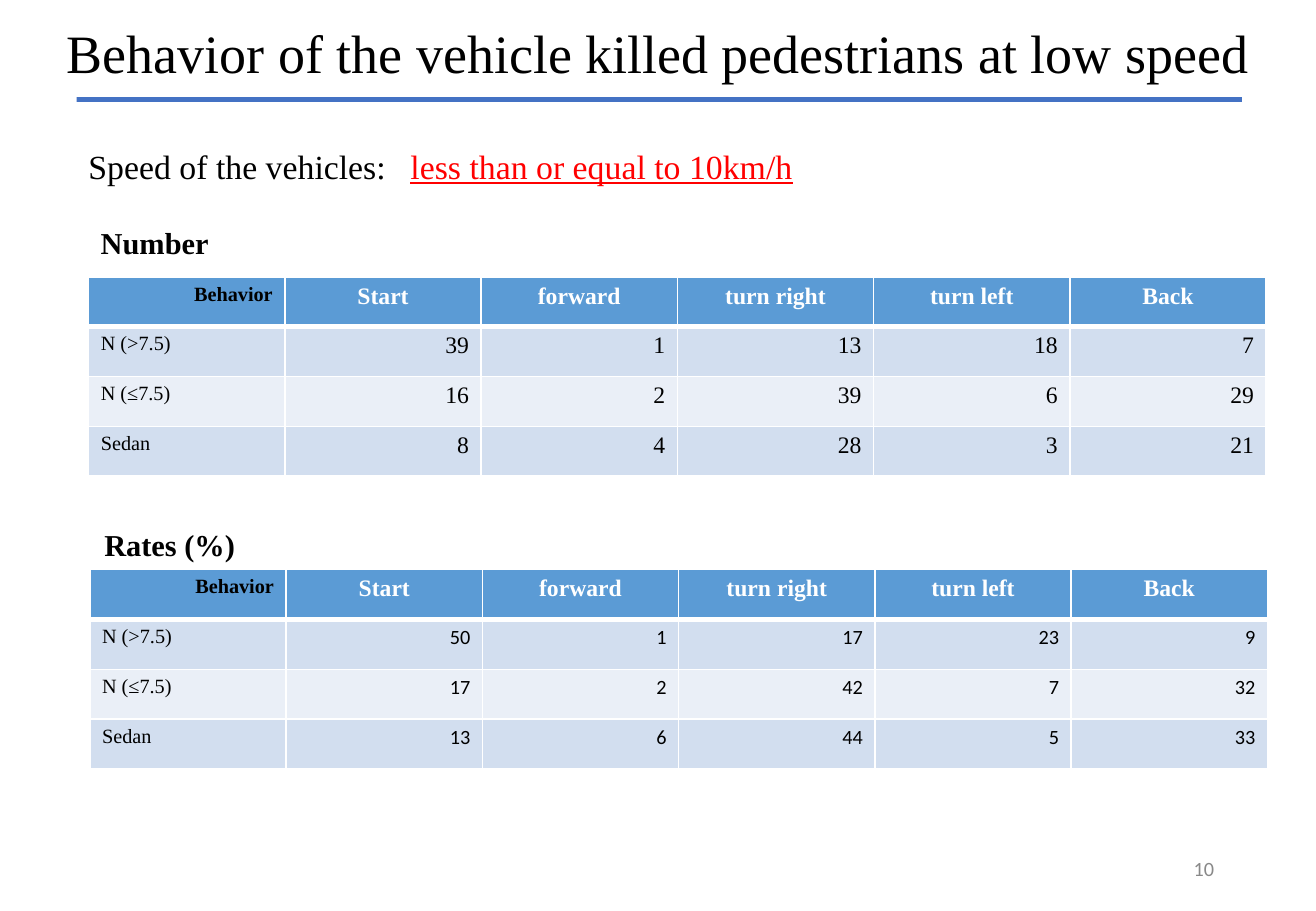
"""Build a slide with two tables on vehicle behavior in low-speed pedestrian deaths."""
from lxml import etree
from pptx import Presentation
from pptx.dml.color import RGBColor
from pptx.enum.shapes import MSO_SHAPE
from pptx.enum.text import MSO_ANCHOR, PP_ALIGN
from pptx.oxml.ns import qn
from pptx.util import Inches, Pt

LEFT, CENTER, RIGHT = PP_ALIGN.LEFT, PP_ALIGN.CENTER, PP_ALIGN.RIGHT
TOP, MIDDLE = MSO_ANCHOR.TOP, MSO_ANCHOR.MIDDLE
RECTANGLE = MSO_SHAPE.RECTANGLE
TITLE_ONLY = 5
SERIF, SANS = "Times New Roman", "Calibri"
BLACK, WHITE, RED, GRAY = "000000", "FFFFFF", "FF0000", "898989"
RULE_BLUE, HEADER_BLUE = "4472C4", "5B9BD5"
BANDS = ("D2DEEF", "EAEFF7")

TITLE = "Behavior of the vehicle killed pedestrians at low speed"
SPEED_LABEL, SPEED_LIMIT = "Speed of the vehicles:", "less than or equal to 10km/h"
PAGE_NUMBER = "10"
HEADER = ("Behavior", "Start", "forward", "turn right", "turn left", "Back")
NUMBERS = (
    ("N (>7.5)", 39, 1, 13, 18, 7),
    ("N (≤7.5)", 16, 2, 39, 6, 29),
    ("Sedan", 8, 4, 28, 3, 21),
)
RATES = (
    ("N (>7.5)", 50, 1, 17, 23, 9),
    ("N (≤7.5)", 17, 2, 42, 7, 32),
    ("Sedan", 13, 6, 44, 5, 33),
)
SECTIONS = (
    ("Number", (0.73, 1.8), NUMBERS, (0.73, 2.28), SERIF, 14),
    ("Rates (%)", (0.76, 4.28), RATES, (0.74, 4.69), SANS, 12),
)
TABLE_WIDTH, ROW_HEIGHT = 9.69, 0.41


def color(value):
    return RGBColor.from_string(value)


def format_run(run, size, font=SERIF, fill=BLACK, bold=False, underline=False):
    run.font.size = Pt(size)
    run.font.name = font
    run.font.color.rgb = color(fill)
    run.font.bold = bold
    run.font.underline = underline


def write(text_frame, text, size, align=LEFT, anchor=TOP, **style):
    text_frame.text = text
    text_frame.word_wrap = True
    text_frame.vertical_anchor = anchor
    paragraph = text_frame.paragraphs[0]
    paragraph.alignment = align
    format_run(paragraph.runs[0], size, **style)
    return paragraph


def add_text(slide, box, text, size, **style):
    shape = slide.shapes.add_textbox(*map(Inches, box))
    return write(shape.text_frame, text, size, **style)


def add_title(slide):
    title = slide.shapes.title
    title.left, title.top, title.width, title.height = map(Inches, (0.42, 0.11, 10, 0.64))
    write(title.text_frame, TITLE, 32, align=CENTER, anchor=MIDDLE)
    rule = slide.shapes.add_shape(RECTANGLE, *map(Inches, (0.63, 0.8, 9.59, 0.04)))
    rule.shadow.inherit = False
    rule.fill.solid()
    rule.fill.fore_color.rgb = color(RULE_BLUE)
    rule.line.fill.background()


def add_speed(slide):
    paragraph = add_text(slide, (0.63, 1.15, 6.2, 0.44), SPEED_LABEL + "\t", 20)
    tabs = etree.SubElement(paragraph._p.get_or_add_pPr(), qn("a:tabLst"))
    etree.SubElement(tabs, qn("a:tab"), pos=str(Inches(2.65)), algn="l")
    limit = paragraph.add_run()
    limit.text = SPEED_LIMIT
    format_run(limit, 20, fill=RED, underline=True)


def add_borders(cell, row):
    top, bottom = 3 if row == 1 else 1, 3 if row == 0 else 1
    properties = cell._tc.get_or_add_tcPr()
    for side, width in (("L", 1), ("R", 1), ("T", top), ("B", bottom)):
        line = etree.SubElement(properties, qn("a:ln" + side), w=str(Pt(width)))
        solid = etree.SubElement(line, qn("a:solidFill"))
        etree.SubElement(solid, qn("a:srgbClr"), val=WHITE)


def cell_style(row, column, value_font, value_size):
    if row == 0 and column == 0:
        return dict(size=12, align=RIGHT, bold=True)
    if row == 0:
        return dict(size=14, align=CENTER, fill=WHITE, bold=True)
    if column == 0:
        return dict(size=12)
    return dict(size=value_size, align=RIGHT, font=value_font)


def add_behavior_table(slide, position, data, value_font, value_size):
    rows = (HEADER,) + data
    box = (*position, TABLE_WIDTH, ROW_HEIGHT * len(rows))
    table = slide.shapes.add_table(len(rows), len(HEADER), *map(Inches, box)).table
    for row, values in enumerate(rows):
        background = BANDS[(row - 1) % 2] if row else HEADER_BLUE
        for column, value in enumerate(values):
            cell = table.cell(row, column)
            add_borders(cell, row)
            cell.fill.solid()
            cell.fill.fore_color.rgb = color(background)
            write(cell.text_frame, str(value), **cell_style(row, column, value_font, value_size))


def main():
    presentation = Presentation()
    presentation.slide_width, presentation.slide_height = Inches(10.83), Inches(7.5)
    slide = presentation.slides.add_slide(presentation.slide_layouts[TITLE_ONLY])
    add_title(slide)
    add_speed(slide)
    for heading, place, data, position, font, size in SECTIONS:
        add_text(slide, (*place, 7.08, 0.4), heading, 18, bold=True)
        add_behavior_table(slide, position, data, font, size)
    add_text(slide, (7.65, 6.95, 2.44, 0.4), PAGE_NUMBER, 12,
             align=RIGHT, anchor=MIDDLE, font=SANS, fill=GRAY)
    presentation.save("out.pptx")


if __name__ == "__main__":
    main()
